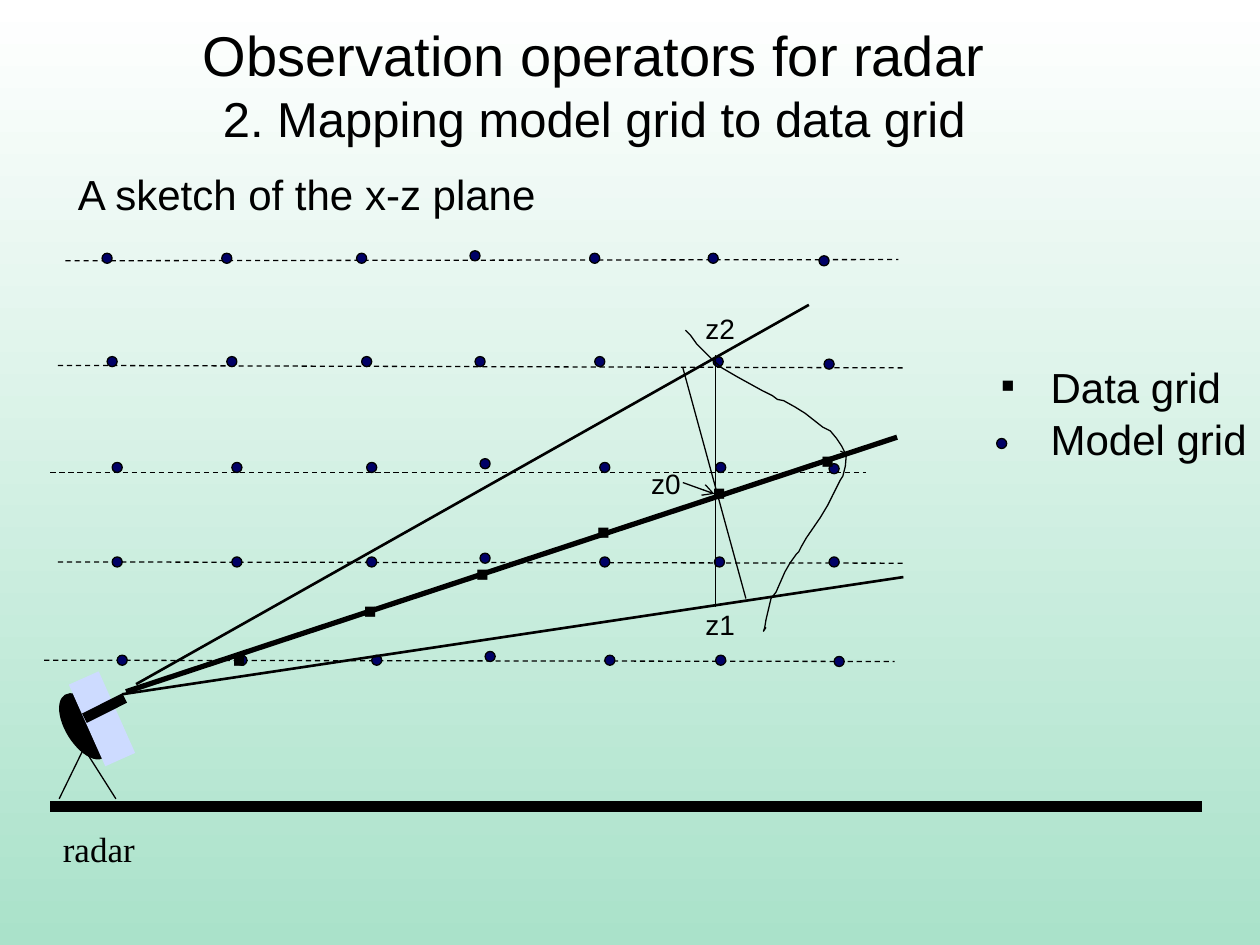
from lxml.etree import SubElement
from pptx import Presentation
from pptx.dml.color import RGBColor
from pptx.enum.dml import MSO_LINE
from pptx.enum.shapes import MSO_CONNECTOR, MSO_SHAPE
from pptx.enum.text import MSO_ANCHOR, MSO_AUTO_SIZE, PP_ALIGN
from pptx.oxml.ns import qn
from pptx.util import Inches, Pt

BLACK = RGBColor(0x00, 0x00, 0x00)
WHITE = RGBColor(0xFF, 0xFF, 0xFF)
NAVY = RGBColor(0x00, 0x00, 0x66)
PALE = RGBColor(0xCD, 0xDB, 0xFF)
MINT = RGBColor(0xAA, 0xE2, 0xCA)

# Content: title lines with size
TITLE = [("Observation operators for radar", 32),
         ("2. Mapping model grid to data grid", 28)]

# Labels: text, left, top, width, height, size, font
LABELS = [
    ("radar", 0.4, 6.52, 1.02, 0.43, 20, "Times New Roman"),
    ("Data grid", 8.24, 2.82, 1.55, 0.5, 24, "Arial"),
    ("Model grid", 8.24, 3.23, 1.76, 0.5, 24, "Arial"),
    ("A sketch of the x-z plane", 0.52, 1.29, 3.85, 0.5, 24, "Arial"),
    ("z1", 5.5, 4.77, 0.44, 0.37, 16, "Arial"),
    ("z2", 5.5, 2.42, 0.44, 0.37, 16, "Arial"),
    ("z0", 5.07, 3.65, 0.44, 0.37, 16, "Arial"),
]

# Lines: x1, y1, x2, y2, width
LEGS = [(0.92, 6.34, 0.66, 5.93, 0.75), (0.47, 6.34, 0.67, 5.93, 0.75)]
BEAMS = [
    (0.97, 5.51, 7.17, 4.58, 1.5),    # lower edge
    (1, 5.49, 7.12, 3.47, 3),         # axis
    (1.08, 5.43, 6.42, 2.42, 1.5),    # upper edge
    (0.67, 5.7, 0.99, 5.54, 6),       # feed
    (0.4, 6.4, 9.54, 6.4, 6),         # ground
    (5.68, 2.82, 5.68, 4.82, 0.75),   # vertical section
    (5.42, 2.92, 5.92, 4.75, 0.75),   # section across the beam
]
LEVELS = [(0.52, 2.07, 7.13, 2.06), (0.46, 2.9, 7.18, 2.92),
          (0.4, 3.75, 6.87, 3.75), (0.46, 4.46, 7.18, 4.47),
          (0.35, 5.24, 7.1, 5.25)]
POINTER = (5.42, 3.83, 5.67, 3.92, 0.75)

# Model grid: column lefts; per row the shift, top, then the
# rise of column 4, the slip of column 6 and the drop of column 7
COLS = [0.81, 1.76, 2.83, 3.73, 4.68, 5.62, 6.5]
ROWS = [(0, 2.01, 0.02, 0, 0.02), (0.04, 2.83, 0, 0, 0.02),
        (0.08, 3.67, 0.03, 0.02, 0.01), (0.08, 4.42, 0.03, 0.03, 0),
        (0.12, 5.2, 0.03, 0.06, 0.01)]
DOT = 0.08
KEYDOT = (7.91, 3.48)

# Data grid: left and top of each mark, the key first
MARKS = [(7.85, 2.9), (4.64, 4.07), (6.42, 3.5), (5.56, 3.76),
         (3.68, 4.4), (2.79, 4.69), (1.75, 5.08)]

# Beam weight curve, upper and lower half
CURVES = [
    [(5.44, 2.62), (5.48, 2.66), (5.53, 2.73), (5.59, 2.79), (5.66, 2.86),
     (5.73, 2.92), (5.85, 2.99), (6.05, 3.1), (6.13, 3.14), (6.17, 3.17),
     (6.22, 3.18), (6.31, 3.23), (6.39, 3.28), (6.53, 3.39), (6.59, 3.42),
     (6.64, 3.48), (6.68, 3.54), (6.7, 3.58), (6.71, 3.6), (6.67, 3.58)],
    [(6.72, 3.58), (6.71, 3.7), (6.69, 3.78), (6.67, 3.81), (6.61, 3.93),
     (6.57, 4.01), (6.51, 4.11), (6.4, 4.27), (6.36, 4.34), (6.34, 4.38),
     (6.32, 4.4), (6.27, 4.47), (6.23, 4.54), (6.16, 4.7), (6.12, 4.75),
     (6.08, 4.92), (6.07, 4.98), (6.06, 5.01), (6.08, 4.98)],
]

deck = Presentation()
deck.slide_width, deck.slide_height = Inches(10), Inches(7.5)
slide = deck.slides.add_slide(deck.slide_layouts[5])
shapes = slide.shapes


def stroke(x1, y1, x2, y2, width=0.75):
    line = shapes.add_connector(MSO_CONNECTOR.STRAIGHT,
                                *map(Inches, (x1, y1, x2, y2)))
    line.line.color.rgb = BLACK
    line.line.width = Pt(width)
    SubElement(line._element.spPr, qn("a:effectLst"))
    return line


def solid(kind, box, fill, edge=True, turn=0):
    shape = shapes.add_shape(kind, *map(Inches, box))
    shape.shadow.inherit = False
    shape.rotation = turn
    shape.fill.solid()
    shape.fill.fore_color.rgb = fill
    if edge:
        shape.line.color.rgb = BLACK
        shape.line.width = Pt(0.75)
    else:
        shape.line.fill.background()


def dot(x, y):
    solid(MSO_SHAPE.OVAL, (x, y, DOT, DOT), NAVY)


def label(text, x, y, w, h, size, face):
    frame = shapes.add_textbox(*map(Inches, (x, y, w, h))).text_frame
    frame.word_wrap = False
    frame.auto_size = MSO_AUTO_SIZE.SHAPE_TO_FIT_TEXT
    para = frame.paragraphs[0]
    para.text = text
    para.font.size, para.font.name = Pt(size), face
    para.font.color.rgb = BLACK


# Background: mint at the bottom, white at the top
back = slide.background.fill
back.gradient()
back.gradient_angle = 90
for stop, color, place in zip(back.gradient_stops, (MINT, WHITE), (0, 1)):
    stop.color.rgb = color
    stop.position = place

# Title
title = shapes.title
title.left, title.top = Inches(0.09), Inches(0.04)
title.width, title.height = Inches(9.25), Inches(1.25)
frame = title.text_frame
frame.auto_size = MSO_AUTO_SIZE.NONE
frame.vertical_anchor = MSO_ANCHOR.MIDDLE
para = frame.paragraphs[0]
para.alignment = PP_ALIGN.CENTER
para.font.name = "Arial"
para.font.color.rgb = BLACK
for i, (text, size) in enumerate(TITLE):
    if i:
        para.add_line_break()
    run = para.add_run()
    run.text = text
    run.font.size = Pt(size)

# Radar dish on its legs, half hidden by a pale block
for leg in LEGS:
    stroke(*leg)
solid(MSO_SHAPE.OVAL, (0.38, 5.62, 0.58, 0.29), BLACK, turn=58.2)
solid(MSO_SHAPE.RECTANGLE, (0.68, 5.35, 0.26, 0.71), PALE, False, 335.9)

# Model levels and grid points
for level in LEVELS:
    stroke(*level).line.dash_style = MSO_LINE.DASH
for shift, top, rise, slip, drop in ROWS:
    for col, x in enumerate(COLS):
        dx = shift - (slip if col == 5 else 0)
        dy = {3: -rise, 6: drop}.get(col, 0)
        dot(x + dx, top + dy)
dot(*KEYDOT)

# Beam, ground and section lines
for beam in BEAMS:
    stroke(*beam)

# Weight curve
for curve in CURVES:
    points = [(Inches(x), Inches(y)) for x, y in curve]
    path = shapes.build_freeform(*points[0])
    path.add_line_segments(points[1:], close=False)
    arc = path.convert_to_shape()
    arc.shadow.inherit = False
    arc.fill.background()
    arc.line.color.rgb = BLACK
    arc.line.width = Pt(0.75)

# Data grid marks, labels and pointer
for x, y in MARKS:
    label("■", x, y, 0.29, 0.3, 12, "Arial")
for item in LABELS:
    label(*item)
arrow = stroke(*POINTER)
SubElement(arrow.line._get_or_add_ln(), qn("a:tailEnd"), type="arrow")

deck.save("out.pptx")
